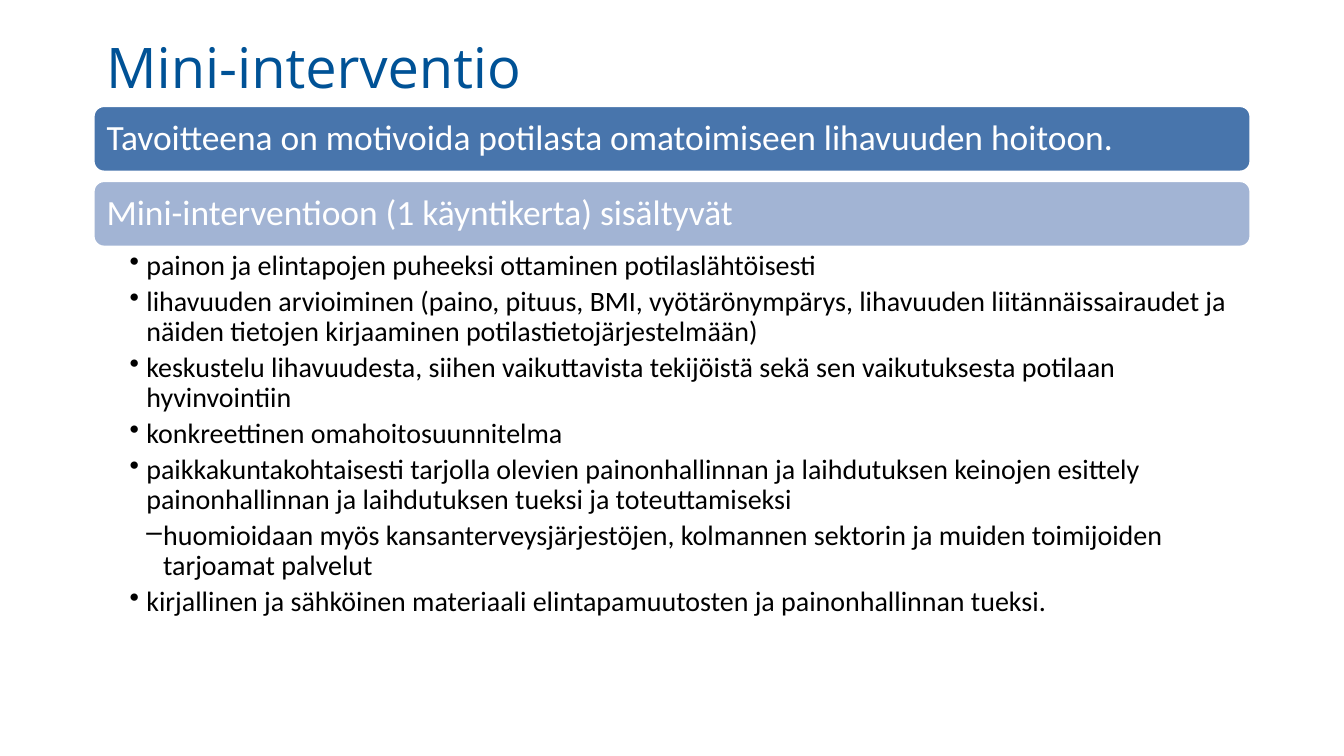
from dataclasses import dataclass

from lxml.etree import SubElement
from pptx import Presentation
from pptx.dml.color import RGBColor
from pptx.enum.shapes import MSO_SHAPE
from pptx.enum.text import MSO_ANCHOR, MSO_AUTO_SIZE, PP_ALIGN
from pptx.oxml.ns import qn
from pptx.util import Pt


@dataclass(frozen=True)
class Theme:
    title_font: str = "Open Sans"
    body_font: str = "Calibri"
    title_size: int = 30
    bar_size: int = 19
    bullet_size: int = 15
    title_color: str = "005296"
    goal_fill: str = "4875AC"
    contents_fill: str = "A2B4D4"
    light: str = "FFFFFF"
    dark: str = "000000"


THEME = Theme()
LEFT, WIDTH = 49.68, 620.64
BAR_TOP, BAR_HEIGHT, BAR_PITCH = 56.4, 36, 40.2
BULLET_INDENT = 9

BARS = [
    ("Tavoitteena on motivoida potilasta omatoimiseen lihavuuden hoitoon.", THEME.goal_fill),
    ("Mini-interventioon (1 käyntikerta) sisältyvät", THEME.contents_fill),
]
CONTENTS = [
    (1, "painon ja elintapojen puheeksi ottaminen potilaslähtöisesti"),
    (1, "lihavuuden arvioiminen (paino, pituus, BMI, vyötärönympärys, lihavuuden "
        "liitännäissairaudet ja näiden tietojen kirjaaminen potilastietojärjestelmään)"),
    (1, "keskustelu lihavuudesta, siihen vaikuttavista tekijöistä sekä sen vaikutuksesta "
        "potilaan hyvinvointiin"),
    (1, "konkreettinen omahoitosuunnitelma"),
    (1, "paikkakuntakohtaisesti tarjolla olevien painonhallinnan ja laihdutuksen keinojen "
        "esittely painonhallinnan ja laihdutuksen tueksi ja toteuttamiseksi"),
    (2, "huomioidaan myös kansanterveysjärjestöjen, kolmannen sektorin ja muiden "
        "toimijoiden tarjoamat palvelut"),
    (1, "kirjallinen ja sähköinen materiaali elintapamuutosten ja painonhallinnan tueksi."),
]


def set_attributes(target, values):
    for name, value in values.items():
        setattr(target, name, value)


def format_frame(frame, margins, anchor):
    """Set margins, given as left, top, right and bottom, and the vertical anchor."""
    left, top, right, bottom = map(Pt, margins)
    set_attributes(frame, {
        "word_wrap": True, "auto_size": MSO_AUTO_SIZE.NONE, "vertical_anchor": anchor,
        "margin_left": left, "margin_top": top,
        "margin_right": right, "margin_bottom": bottom,
    })


def format_paragraph(paragraph, font, size, color, line_spacing=0.9, space_after=0):
    set_attributes(paragraph, {
        "alignment": PP_ALIGN.LEFT, "line_spacing": line_spacing,
        "space_before": Pt(0), "space_after": Pt(space_after),
    })
    set_attributes(paragraph.font, {"name": font, "size": Pt(size), "bold": False})
    paragraph.font.color.rgb = RGBColor.from_string(color)


def add_bullet(paragraph, level):
    paragraph.level = level
    properties = paragraph._p.get_or_add_pPr()
    properties.set("marL", str(Pt(BULLET_INDENT * level)))
    properties.set("indent", str(-Pt(BULLET_INDENT)))
    SubElement(properties, qn("a:buChar")).set("char", "•" if level == 1 else "–")


def add_title(slide, text):
    title = slide.shapes.title
    set_attributes(title, {"left": Pt(LEFT), "top": Pt(13.68),
                           "width": Pt(WIDTH), "height": Pt(43.92)})
    format_frame(title.text_frame, (7.2, 0, 7.2, 0), MSO_ANCHOR.MIDDLE)
    title.text_frame.text = text
    format_paragraph(title.text_frame.paragraphs[0], THEME.title_font, THEME.title_size,
                     THEME.title_color, line_spacing=1.0)


def add_bar(slide, top, text, fill):
    bar = slide.shapes.add_shape(MSO_SHAPE.ROUNDED_RECTANGLE, Pt(LEFT), Pt(top),
                                 Pt(WIDTH), Pt(BAR_HEIGHT))
    bar.shadow.inherit = False
    bar.fill.solid()
    bar.fill.fore_color.rgb = RGBColor.from_string(fill)
    bar.line.color.rgb = RGBColor.from_string(THEME.light)
    bar.line.width = Pt(2)
    format_frame(bar.text_frame, (5.7,) * 4, MSO_ANCHOR.MIDDLE)
    bar.text_frame.text = text
    format_paragraph(bar.text_frame.paragraphs[0], THEME.body_font, THEME.bar_size, THEME.light)


def add_bullet_list(slide, top, items):
    box = slide.shapes.add_textbox(Pt(LEFT), Pt(top), Pt(WIDTH), Pt(210))
    frame = box.text_frame
    format_frame(frame, (19.7, 1.9, 10.7, 1.9), MSO_ANCHOR.TOP)
    for index, (level, text) in enumerate(items):
        paragraph = frame.add_paragraph() if index else frame.paragraphs[0]
        paragraph.text = text
        add_bullet(paragraph, level)
        format_paragraph(paragraph, THEME.body_font, THEME.bullet_size, THEME.dark,
                         space_after=3)


def main():
    presentation = Presentation()
    presentation.slide_width, presentation.slide_height = Pt(720), Pt(405)
    slide = presentation.slides.add_slide(presentation.slide_layouts[5])
    add_title(slide, "Mini-interventio")
    for index, (text, fill) in enumerate(BARS):
        add_bar(slide, BAR_TOP + index * BAR_PITCH, text, fill)
    add_bullet_list(slide, BAR_TOP + BAR_PITCH + BAR_HEIGHT, CONTENTS)
    presentation.save("out.pptx")


if __name__ == "__main__":
    main()
